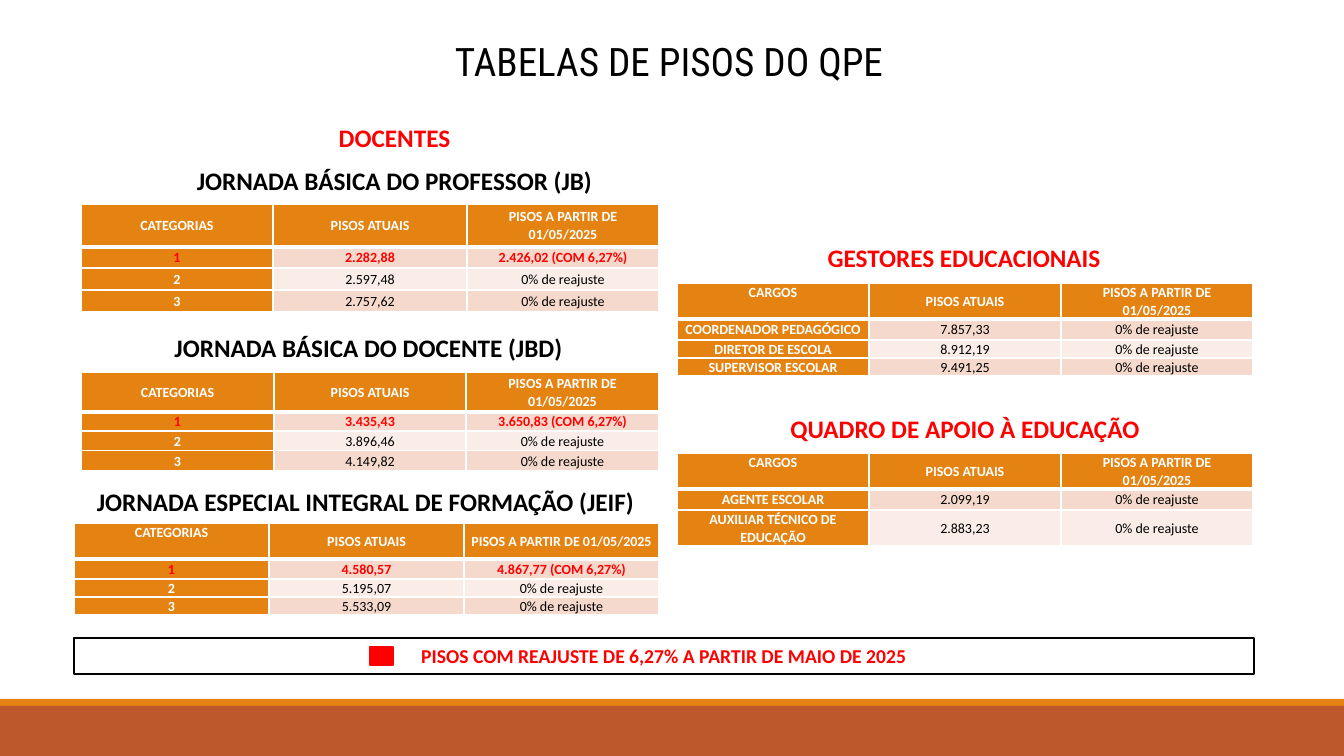
from lxml.etree import SubElement
from pptx import Presentation
from pptx.dml.color import RGBColor
from pptx.enum.shapes import MSO_SHAPE
from pptx.enum.text import MSO_ANCHOR, MSO_AUTO_SIZE, PP_ALIGN
from pptx.oxml.ns import qn
from pptx.util import Pt

EMU_PER_PX = 914400 / 100.8
SLIDE_WIDTH, SLIDE_HEIGHT = 1344, 756

BLACK = RGBColor(0x00, 0x00, 0x00)
WHITE = RGBColor(0xFF, 0xFF, 0xFF)
RED = RGBColor(0xFF, 0x00, 0x00)
ORANGE = RGBColor(0xE4, 0x83, 0x12)
BRICK = RGBColor(0xBD, 0x58, 0x2C)
BAND_DARK = RGBColor(0xF5, 0xD9, 0xCC)
BAND_LIGHT = RGBColor(0xFA, 0xED, 0xE7)

BODY_FONT = "Calibri"
TITLE_FONT = "Roboto Condensed"
NO_RAISE = "0% de reajuste"
LINE_SPACING = 1.07


def px(length):
    return round(length * EMU_PER_PX)


def place(box):
    return [px(length) for length in box]


def format_paragraph(paragraph, size, color, bold=True, font=BODY_FONT):
    paragraph.alignment = PP_ALIGN.CENTER
    for run in paragraph.runs:
        run.font.name = font
        run.font.size = Pt(size)
        run.font.bold = bold
        run.font.color.rgb = color


def add_rectangle(slide, box, fill, line=None):
    shape = slide.shapes.add_shape(MSO_SHAPE.RECTANGLE, *place(box))
    shape.shadow.inherit = False
    shape.fill.solid()
    shape.fill.fore_color.rgb = fill
    if line is None:
        shape.line.fill.background()
    else:
        shape.line.color.rgb = line
        shape.line.width = Pt(1.25)
    return shape


def add_title(slide, box):
    title = slide.shapes.title
    title.left, title.top, title.width, title.height = place(box)
    title.text_frame.text = "TABELAS DE PISOS DO QPE"
    title.text_frame.auto_size = MSO_AUTO_SIZE.NONE
    title.text_frame.vertical_anchor = MSO_ANCHOR.MIDDLE
    format_paragraph(title.text_frame.paragraphs[0], 28, BLACK, False, TITLE_FONT)


def add_heading(slide, box, lines, indent=0):
    """Bold heading; lines holds (text, color) pairs, one per paragraph."""
    text_frame = slide.shapes.add_textbox(*place(box)).text_frame
    text_frame.word_wrap = True
    text_frame.text = "\n".join(text for text, _ in lines)
    for paragraph, (_, color) in zip(text_frame.paragraphs, lines):
        format_paragraph(paragraph, 18, color)
        paragraph.line_spacing = LINE_SPACING
        paragraph.space_after = Pt(8)
        paragraph._p.get_or_add_pPr().set("indent", str(px(indent)))


def add_borders(cell, top, bottom):
    """White cell borders; top and bottom widths in points."""
    properties = cell._tc.get_or_add_tcPr()
    for side, width in (("L", 1), ("R", 1), ("T", top), ("B", bottom)):
        line = SubElement(properties, qn(f"a:ln{side}"), w=str(Pt(width)))
        fill = SubElement(line, qn("a:solidFill"))
        SubElement(fill, qn("a:srgbClr"), val=str(WHITE))


def fill_cell(cell, text, fill, color, bold):
    cell.margin_left = cell.margin_right = px(7)
    cell.margin_top = cell.margin_bottom = 0
    cell.vertical_anchor = MSO_ANCHOR.MIDDLE
    cell.fill.solid()
    cell.fill.fore_color.rgb = fill
    cell.text_frame.text = text
    paragraph = cell.text_frame.paragraphs[0]
    paragraph.line_spacing = LINE_SPACING
    format_paragraph(paragraph, 10, color, bold)


def add_floor_table(slide, left, top, columns, heights, label, records, label_on_top=False):
    """Salary floor table; each record is (name, current floor, new floor)."""
    rows = [(label, "PISOS ATUAIS", "PISOS A PARTIR DE 01/05/2025"), *records]
    box = (left, top, sum(columns), sum(heights))
    table = slide.shapes.add_table(len(rows), len(columns), *place(box)).table
    for column, width in zip(table.columns, columns):
        column.width = px(width)
    for row, height in zip(table.rows, heights):
        row.height = px(height)
    for row_index, texts in enumerate(rows):
        raised = texts[-1] != NO_RAISE and row_index > 0
        band = BAND_DARK if row_index % 2 else BAND_LIGHT
        for column_index, text in enumerate(texts):
            cell = table.cell(row_index, column_index)
            is_label = row_index == 0 or column_index == 0
            color = RED if raised else WHITE if is_label else BLACK
            add_borders(cell, 3 if row_index == 1 else 1, 3 if row_index == 0 else 1)
            fill_cell(cell, text, ORANGE if is_label else band, color, is_label or raised)
    if label_on_top:
        table.cell(0, 0).vertical_anchor = MSO_ANCHOR.TOP


def add_teachers(slide, left, top):
    """Left column: three working schedules."""
    add_heading(slide, (left, top, 578, 87),
                [("DOCENTES", RED), ("JORNADA BÁSICA DO PROFESSOR (JB)", BLACK)], indent=49)
    add_floor_table(slide, left, top + 89, (192, 194, 192), (43, 21, 22, 22), "CATEGORIAS", [
        ("1", "2.282,88", "2.426,02 (COM 6,27%)"),
        ("2", "2.597,48", NO_RAISE),
        ("3", "2.757,62", NO_RAISE)])

    add_heading(slide, (left, top + 210, 575, 43), [("JORNADA BÁSICA DO DOCENTE (JBD)", BLACK)])
    add_floor_table(slide, left, top + 257, (193, 192, 193), (40, 19, 20, 20), "CATEGORIAS", [
        ("1", "3.435,43", "3.650,83 (COM 6,27%)"),
        ("2", "3.896,46", NO_RAISE),
        ("3", "4.149,82", NO_RAISE)])

    add_heading(slide, (left - 7, top + 364, 583, 41),
                [("JORNADA ESPECIAL INTEGRAL DE FORMAÇÃO (JEIF)", BLACK)])
    add_floor_table(slide, left - 7, top + 408, (195, 195, 195), (36, 20, 18, 18), "CATEGORIAS", [
        ("1", "4.580,57", "4.867,77 (COM 6,27%)"),
        ("2", "5.195,07", NO_RAISE),
        ("3", "5.533,09", NO_RAISE)], label_on_top=True)


def add_managers_and_support(slide, left, top):
    """Right column: managers and support staff."""
    columns = (192, 192, 192)
    add_heading(slide, (left - 2, top, 578, 43), [("GESTORES EDUCACIONAIS", RED)])
    add_floor_table(slide, left, top + 48, columns, (36, 21, 18, 18), "CARGOS", [
        ("COORDENADOR PEDAGÓGICO", "7.857,33", NO_RAISE),
        ("DIRETOR DE ESCOLA", "8.912,19", NO_RAISE),
        ("SUPERVISOR ESCOLAR", "9.491,25", NO_RAISE)], label_on_top=True)

    add_heading(slide, (left, top + 171, 576, 43), [("QUADRO DE APOIO À EDUCAÇÃO", RED)])
    add_floor_table(slide, left, top + 218, columns, (36, 21, 36), "CARGOS", [
        ("AGENTE ESCOLAR", "2.099,19", NO_RAISE),
        ("AUXILIAR TÉCNICO DE EDUCAÇÃO", "2.883,23", NO_RAISE)], label_on_top=True)


def add_legend(slide, box):
    left, top, _, _ = box
    legend = add_rectangle(slide, box, WHITE, BLACK)
    legend.text_frame.text = "PISOS COM REAJUSTE DE 6,27% A PARTIR DE MAIO DE 2025"
    legend.text_frame.vertical_anchor = MSO_ANCHOR.MIDDLE
    format_paragraph(legend.text_frame.paragraphs[0], 14, RED)
    add_rectangle(slide, (left + 296, top + 9, 23, 18), RED, RED)


def add_footer_bars(slide, top):
    add_rectangle(slide, (0, top, SLIDE_WIDTH, 7), ORANGE)
    add_rectangle(slide, (0, top + 7, SLIDE_WIDTH, SLIDE_HEIGHT - top - 7), BRICK)


def main():
    presentation = Presentation()
    presentation.slide_width = px(SLIDE_WIDTH)
    presentation.slide_height = px(SLIDE_HEIGHT)
    slide = presentation.slides.add_slide(presentation.slide_layouts[5])
    add_footer_bars(slide, 699)
    add_title(slide, (100, 32, 1138, 58))
    add_teachers(slide, 81, 115)
    add_managers_and_support(slide, 677, 235)
    add_legend(slide, (74, 638, 1180, 36))
    presentation.save("out.pptx")


if __name__ == "__main__":
    main()
